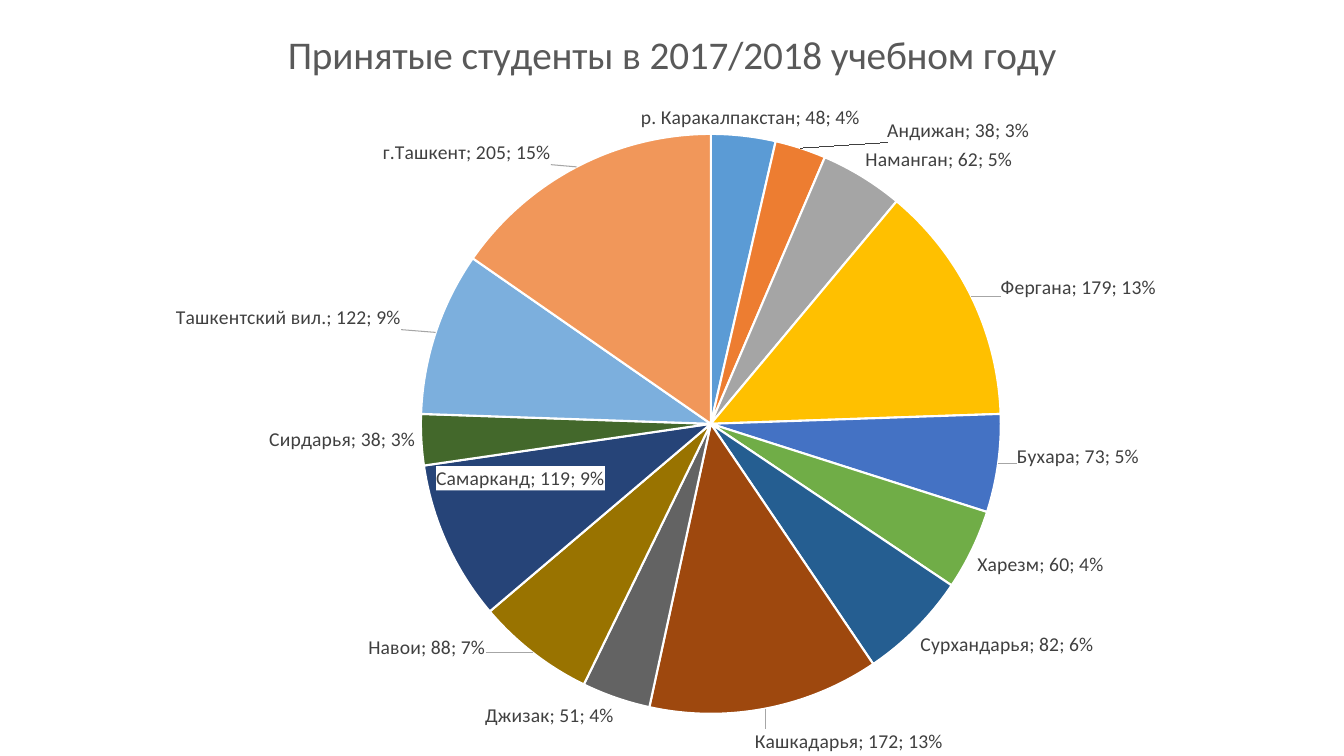
from copy import deepcopy

from pptx import Presentation
from pptx.chart.data import CategoryChartData as Data
from pptx.dml.color import RGBColor as Color
from pptx.enum.chart import XL_CHART_TYPE as Kind, XL_LABEL_POSITION as Spot
from pptx.oxml import parse_xml
from pptx.oxml.ns import nsdecls, qn
from pptx.util import Pt

WIDTH, HEIGHT = 1344, 756
SCALE = 914400 / 100.8
TITLE = "Принятые студенты в 2017/2018 учебном году"
REGIONS = [
    ("р. Каракалпакстан", 48, "5B9BD5"),
    ("Андижан", 38, "ED7D31"),
    ("Наманган", 62, "A5A5A5"),
    ("Фергана", 179, "FFC000"),
    ("Бухара", 73, "4472C4"),
    ("Харезм", 60, "70AD47"),
    ("Сурхандарья", 82, "255E91"),
    ("Кашкадарья", 172, "9E480E"),
    ("Джизак", 51, "636363"),
    ("Навои", 88, "997300"),
    ("Самарканд", 119, "264478"),
    ("Сирдарья", 38, "43682B"),
    ("Ташкентский вил.", 122, "7CAFDD"),
    ("г.Ташкент", 205, "F1975A"),
]
SHIFTS = {3: (24, 6), 4: (13, -20), 7: (-12, 15),
          9: (-44, -22), 12: (-29, -1), 13: (-23, 3)}


def px(count):
    return round(count * SCALE)


def paint(form, tint):
    form.solid()
    form.fore_color.rgb = Color.from_string(tint)


def style(font, size, tint):
    for name, value in {"name": "Calibri", "size": Pt(size), "bold": False}.items():
        setattr(font, name, value)
    paint(font.fill, tint)


def node(tag, body="", attrs=""):
    return parse_xml(f'<c:{tag} {nsdecls("c", "a")} {attrs}>{body}</c:{tag}>')


def layout(x, y, size=None):
    parts = {"x": x / WIDTH, "y": y / HEIGHT}
    modes = ""
    if size:
        parts.update(w=size / WIDTH, h=size / HEIGHT)
        modes = '<c:layoutTarget val="inner"/><c:xMode val="edge"/><c:yMode val="edge"/>'
    body = "".join(f'<c:{key} val="{part:.4f}"/>' for key, part in parts.items())
    return node("layout", f"<c:manualLayout>{modes}{body}</c:manualLayout>")


def place(chart, x, y, size):
    area = chart._chartSpace.chart.plotArea
    for old in area.findall(qn("c:layout")):
        area.remove(old)
    area.insert(0, layout(x, y, size))


def color(series):
    for index, (_, _, tint) in enumerate(REGIONS):
        form = series.points[index].format
        paint(form.fill, tint)
        paint(form.line.fill, "FFFFFF")
        form.line.width = Pt(1.5)


def label(series):
    labels = series.data_labels
    flags = {"show_value": True, "show_category_name": True,
             "show_percentage": True, "position": Spot.BEST_FIT}
    for name, value in flags.items():
        setattr(labels, name, value)
    style(labels.font, 14, "404040")
    root = labels._element
    fill = '<a:solidFill><a:srgbClr val="{}"/></a:solidFill>'
    root.find(qn("c:txPr")).addprevious(node("spPr", fill.format("FFFFFF")))
    root.find(qn("c:showBubbleSize")).addnext(node("separator", "; "))
    line = f'<c:spPr><a:ln w="9525">{fill.format("A6A6A6")}</a:ln></c:spPr>'
    root.append(node("leaderLines", line))
    shared = [part for part in root
              if part.tag not in (qn("c:showLeaderLines"), qn("c:leaderLines"))]
    for spot, (index, shift) in enumerate(SHIFTS.items()):
        item = node("dLbl")
        item.append(node("idx", attrs=f'val="{index}"'))
        item.append(layout(*shift))
        item.extend(deepcopy(part) for part in shared)
        root.insert(spot, item)


def add_pie(slide):
    data = Data()
    data.categories = [name for name, _, _ in REGIONS]
    data.add_series(TITLE, [count for _, count, _ in REGIONS])
    frame = slide.shapes.add_chart(Kind.PIE, 0, 0, px(WIDTH), px(HEIGHT), data)
    chart = frame.chart
    style(chart.font, 10, "000000")
    chart.has_legend = False
    chart.has_title = True
    chart.chart_title.include_in_layout = False
    text = chart.chart_title.text_frame
    text.text = TITLE
    style(text.paragraphs[0].runs[0].font, 28, "595959")
    plot = chart.plots[0]
    plot.vary_by_categories = True
    color(plot.series[0])
    label(plot.series[0])
    place(chart, 421, 134, 580)


def main():
    deck = Presentation()
    deck.slide_width, deck.slide_height = px(WIDTH), px(HEIGHT)
    slide = deck.slides.add_slide(deck.slide_layouts[6])
    add_pie(slide)
    deck.save("out.pptx")


if __name__ == "__main__":
    main()
